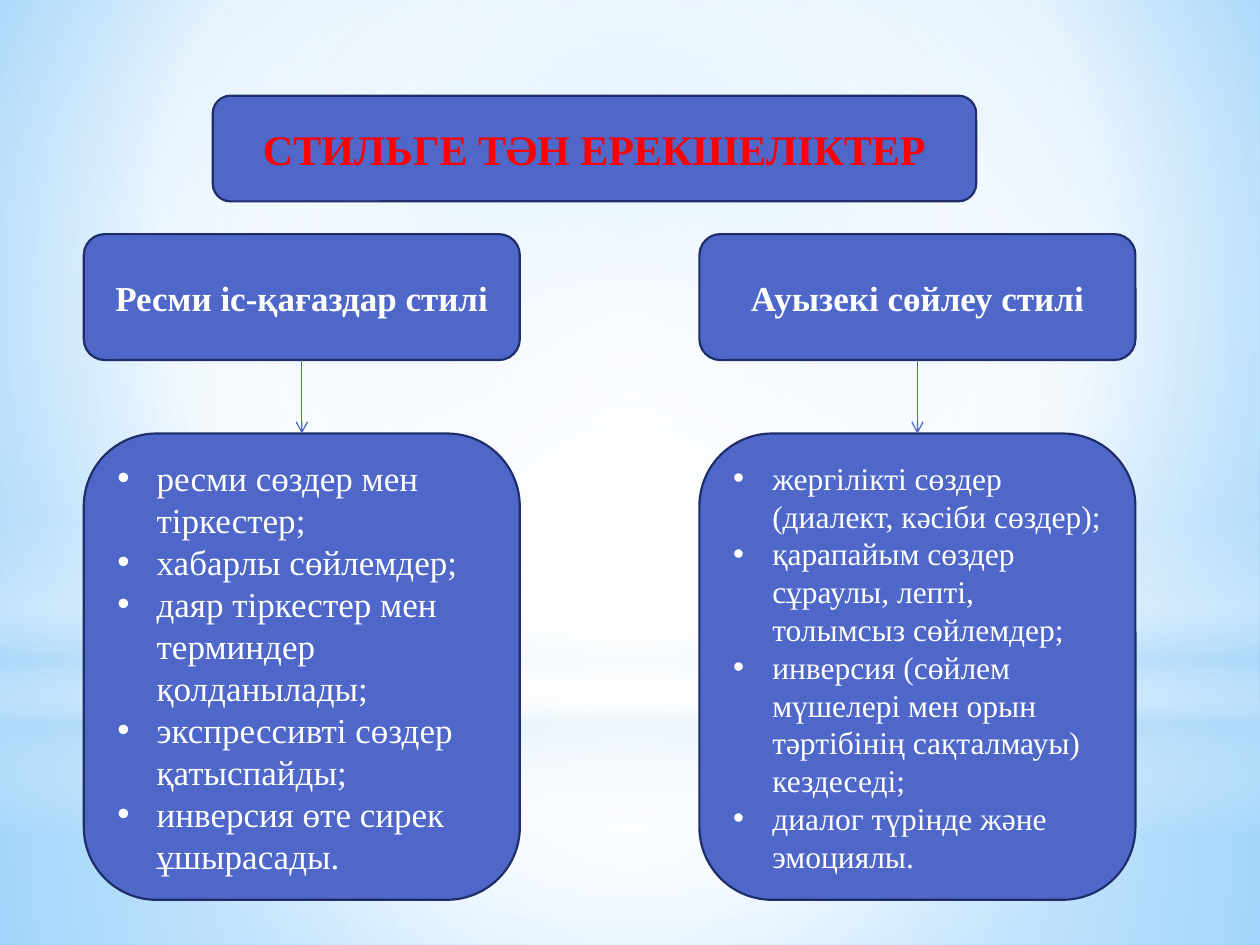
from dataclasses import dataclass

from lxml import etree
from pptx import Presentation
from pptx.dml.color import RGBColor
from pptx.enum.shapes import MSO_CONNECTOR, MSO_SHAPE as Preset
from pptx.enum.text import MSO_ANCHOR, PP_ALIGN as Align
from pptx.oxml.ns import qn
from pptx.util import Cm, Pt

FONT = "Times New Roman"
BLUE, NAVY, RED, WHITE, SKY = "4E67C8", "1F2E69", "FF0000", "FFFFFF", "B4DCFA"
WIDTH, HEIGHT = 25.4, 19.05
COLUMN_WIDTH = 8.79
HEADING_TOP, HEADING_HEIGHT = 4.72, 2.54
LIST_TOP, LIST_HEIGHT = 8.74, 9.4
BULLET_INDENT = Cm(0.79)


@dataclass(frozen=True)
class Box:
    left: float
    top: float
    width: float
    height: float

    def lengths(self) -> tuple:
        return Cm(self.left), Cm(self.top), Cm(self.width), Cm(self.height)


@dataclass(frozen=True)
class Gradient:
    """Stops are (position, colour, opacity) in percent; no focus means top to bottom."""
    stops: tuple
    focus: tuple = ()


@dataclass(frozen=True)
class Glow:
    preset: Preset
    box: Box
    gradient: Gradient


@dataclass(frozen=True)
class Style:
    left: float
    heading: str
    features: tuple
    size: int


CENTRE = (50, 50, 50, 50)
BACKGROUND = Gradient(
    ((0, "9ED5FF", 100), (60, WHITE, 100), (100, "5BB9FF", 100)), (20, 10, 20, 60))
GLOWS = (
    Glow(Preset.RECTANGLE, Box(0, 14.17, WIDTH, 4.88),
         Gradient(((0, WHITE, 91), (37, WHITE, 76), (100, SKY, 79)), CENTRE)),
    Glow(Preset.RECTANGLE, Box(0, 0, WIDTH, 14.17),
         Gradient(((0, WHITE, 89), (48, WHITE, 62), (100, SKY, 79)), CENTRE)),
    Glow(Preset.RECTANGLE, Box(0, 10.46, WIDTH, 6.35),
         Gradient(((0, WHITE, 0), (29, WHITE, 30), (45, SKY, 40),
                   (55, WHITE, 26), (65, SKY, 60), (100, WHITE, 0)))),
    Glow(Preset.OVAL, Box(0, 4.45, WIDTH, 14.17),
         Gradient(((0, WHITE, 100), (56, WHITE, 0)), CENTRE)),
)
STYLES = (
    Style(1.69, "Ресми іс-қағаздар стилі", (
        "ресми сөздер мен тіркестер;",
        "хабарлы сөйлемдер;",
        "даяр тіркестер мен терминдер қолданылады;",
        "экспрессивті сөздер қатыспайды;",
        "инверсия өте сирек ұшырасады.",
    ), 20),
    Style(14.1, "Ауызекі сөйлеу стилі", (
        "жергілікті сөздер (диалект, кәсіби сөздер);",
        "қарапайым сөздер сұраулы, лепті, толымсыз сөйлемдер;",
        "инверсия (сөйлем мүшелері мен орын тәртібінің сақталмауы) кездеседі;",
        "диалог түрінде және эмоциялы.",
    ), 18),
)


def colour(value: str) -> RGBColor:
    return RGBColor.from_string(value)


def add_element(parent, tag: str, **attributes):
    values = {name: str(value) for name, value in attributes.items()}
    return etree.SubElement(parent, qn(tag), values)


def set_gradient(fill, owner, gradient: Gradient) -> None:
    """Swap the solid fill inside owner for the gradient."""
    fill.solid()
    solid = next(owner.iter(qn("a:solidFill")))
    element = etree.Element(qn("a:gradFill"), rotWithShape="1")
    stops = add_element(element, "a:gsLst")
    for position, value, opacity in gradient.stops:
        stop = add_element(stops, "a:gs", pos=position * 1000)
        stop_colour = add_element(stop, "a:srgbClr", val=value)
        if opacity < 100:
            add_element(stop_colour, "a:alpha", val=opacity * 1000)
    if gradient.focus:
        path = add_element(element, "a:path", path="circle")
        sides = {side: share * 1000 for side, share in zip("ltrb", gradient.focus)}
        add_element(path, "a:fillToRect", **sides)
    else:
        add_element(element, "a:lin", ang=90 * 60000, scaled=0)
    solid.getparent().replace(solid, element)


def add_glow(slide, glow: Glow) -> None:
    shape = slide.shapes.add_shape(glow.preset, *glow.box.lengths())
    shape.shadow.inherit = False
    shape.line.fill.background()
    set_gradient(shape.fill, shape.element.spPr, glow.gradient)


def add_panel(slide, box: Box, lines: tuple, size: int, text_colour: str = WHITE,
              bulleted: bool = False) -> None:
    """Rounded panel holding a bold centred heading or a bulleted list."""
    shape = slide.shapes.add_shape(Preset.ROUNDED_RECTANGLE, *box.lengths())
    shape.shadow.inherit = False
    shape.fill.solid()
    shape.fill.fore_color.rgb = colour(BLUE)
    shape.line.color.rgb = colour(NAVY)
    shape.line.width = Pt(1.25)
    frame = shape.text_frame
    frame.word_wrap = True
    frame.vertical_anchor = MSO_ANCHOR.MIDDLE
    frame.text = "\n".join(lines)
    for paragraph in frame.paragraphs:
        paragraph.alignment = Align.LEFT if bulleted else Align.CENTER
        if bulleted:
            add_bullet(paragraph)
        for run in paragraph.runs:
            run.font.name = FONT
            run.font.size = Pt(size)
            run.font.bold = not bulleted
            run.font.color.rgb = colour(text_colour)


def add_bullet(paragraph) -> None:
    properties = paragraph._p.get_or_add_pPr()
    properties.set("marL", str(BULLET_INDENT))
    properties.set("indent", str(-BULLET_INDENT))
    add_element(properties, "a:buFont", typeface="Arial")
    add_element(properties, "a:buChar", char="•")


def add_down_arrow(slide, x: float, top: float, bottom: float) -> None:
    arrow = slide.shapes.add_connector(
        MSO_CONNECTOR.STRAIGHT, Cm(x), Cm(top), Cm(x), Cm(bottom))
    arrow.line.color.rgb = colour(BLUE)
    arrow.line.width = Pt(0.75)
    properties = arrow.element.spPr
    add_element(properties.find(qn("a:ln")), "a:tailEnd", type="arrow")
    add_element(properties, "a:effectLst")


def add_style(slide, style: Style) -> None:
    heading = Box(style.left, HEADING_TOP, COLUMN_WIDTH, HEADING_HEIGHT)
    features = Box(style.left, LIST_TOP, COLUMN_WIDTH, LIST_HEIGHT)
    add_panel(slide, heading, (style.heading,), 20)
    add_panel(slide, features, style.features, style.size, bulleted=True)
    add_down_arrow(slide, style.left + COLUMN_WIDTH / 2,
                   HEADING_TOP + HEADING_HEIGHT, LIST_TOP)


def main() -> None:
    presentation = Presentation()
    presentation.slide_width, presentation.slide_height = Cm(WIDTH), Cm(HEIGHT)
    slide = presentation.slides.add_slide(presentation.slide_layouts[6])
    set_gradient(slide.background.fill, slide.element, BACKGROUND)
    for glow in GLOWS:
        add_glow(slide, glow)
    add_panel(slide, Box(4.29, 1.93, 15.39, 2.13),
              ("СТИЛЬГЕ ТӘН ЕРЕКШЕЛІКТЕР",), 24, RED)
    for style in STYLES:
        add_style(slide, style)
    presentation.save("out.pptx")


if __name__ == "__main__":
    main()
